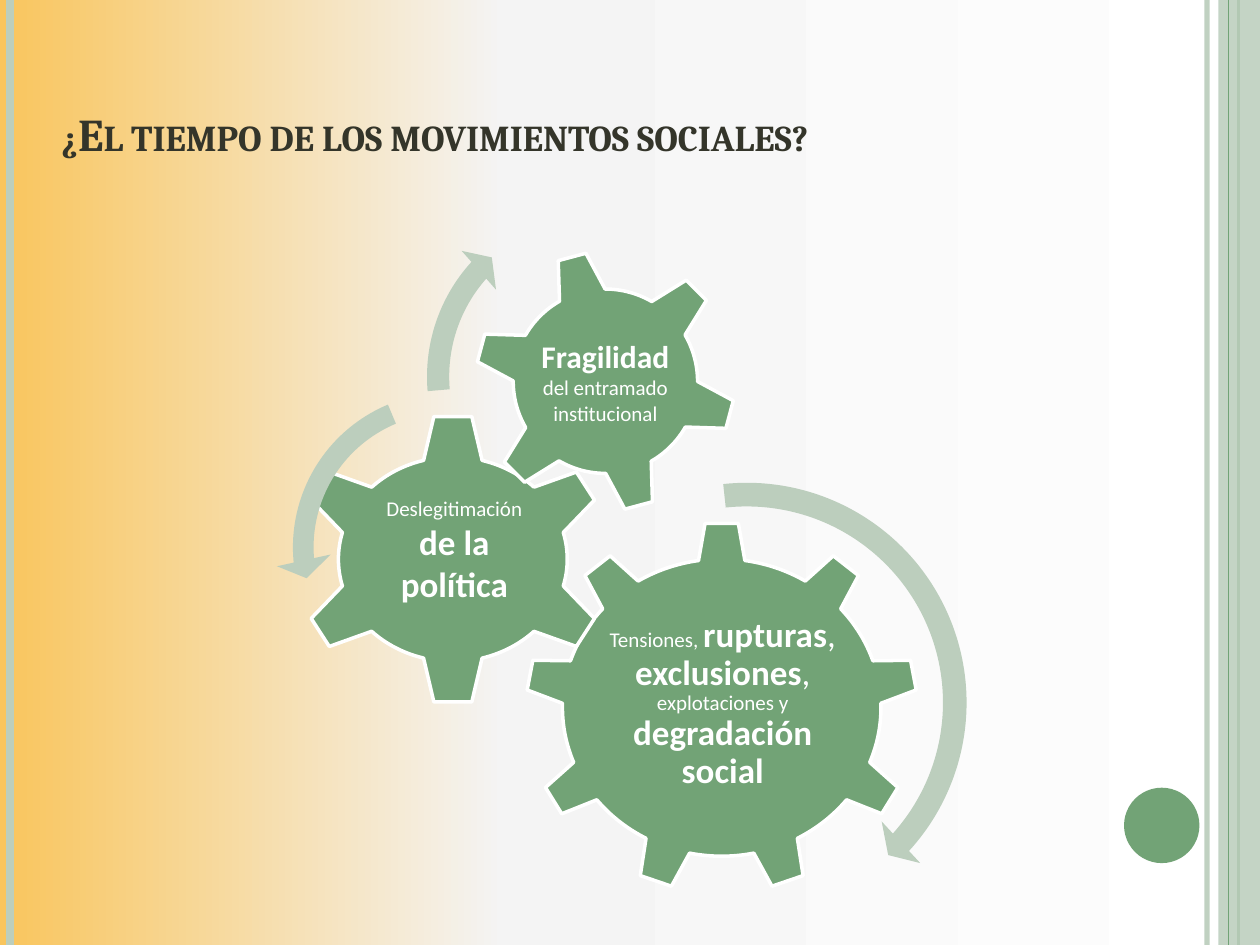
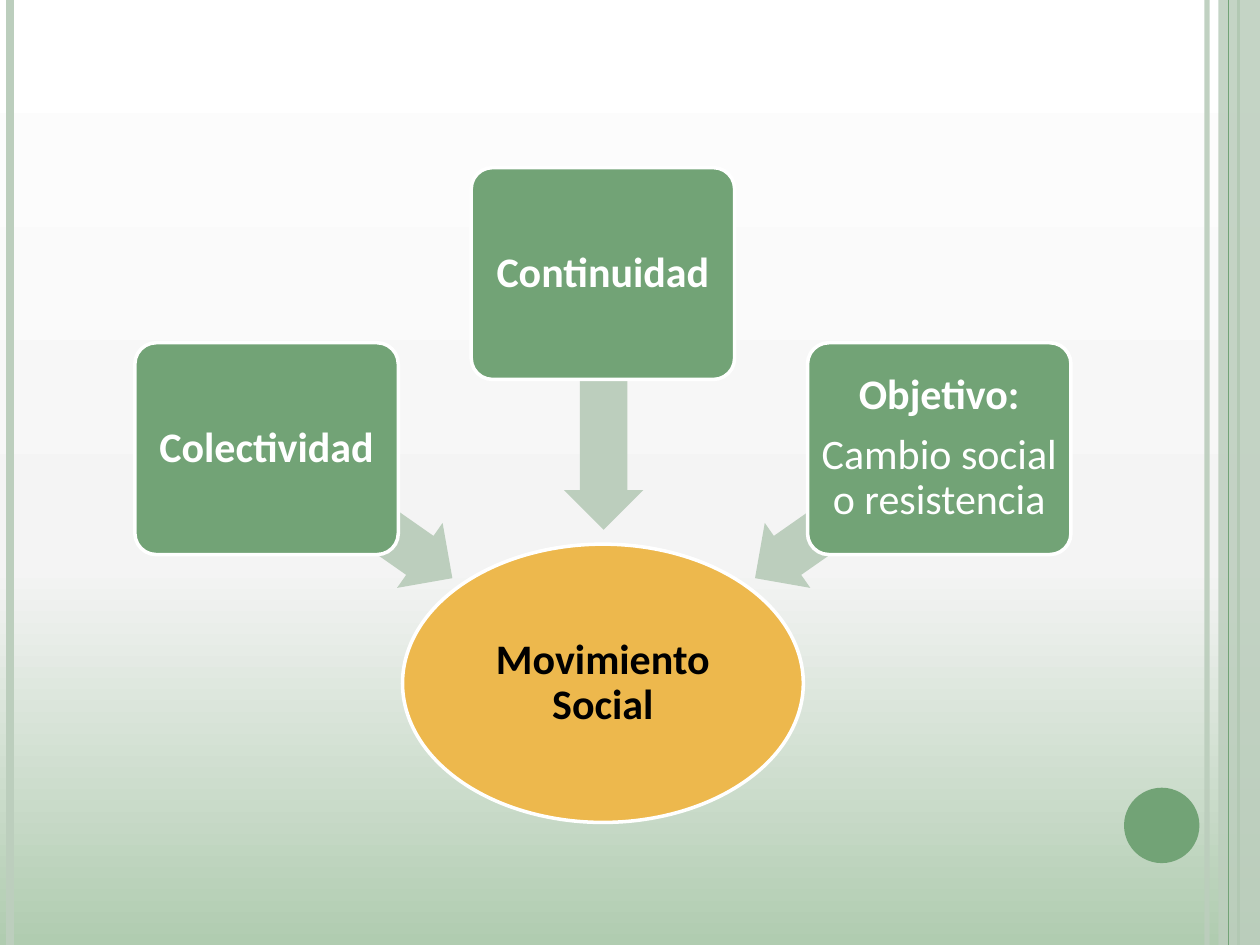
import pptx
import pptx.util
import pptx.oxml
import pptx.dml.color
import pptx.enum.shapes
import pptx.enum.text
import copy

Cm = pptx.util.Cm
Pt = pptx.util.Pt
RGBColor = pptx.dml.color.RGBColor
Shape = pptx.enum.shapes.MSO_SHAPE
Anchor = pptx.enum.text.MSO_ANCHOR
Align = pptx.enum.text.PP_ALIGN

GREEN = RGBColor(0x72, 0xA3, 0x76)
PALE = RGBColor(0xBC, 0xCE, 0xBD)
MINT = RGBColor(0xB0, 0xCC, 0xB0)
AMBER = RGBColor(0xF9, 0xC5, 0x5D)
GOLD = RGBColor(0xED, 0xB8, 0x4D)
GREY = RGBColor(0xF4, 0xF4, 0xF4)
WHITE = RGBColor(0xFF, 0xFF, 0xFF)
BLACK = RGBColor(0, 0, 0)
DARK = RGBColor(0x34, 0x35, 0x2A)

WIDE, HIGH = 25.4, 19.05


def fade(item, share):
    color = item.element.xpath("./p:spPr//a:srgbClr")[0]
    alpha = pptx.oxml.parse_xml(
        '<a:alpha xmlns:a="http://schemas.openxmlformats.org/drawingml/2006/main"/>')
    alpha.set("val", str(share * 1000))
    color.append(alpha)


def draw(slide, kind, box, fill, edge=False, adjust=(), turn=0):
    shape = slide.shapes.add_shape(kind, *map(Cm, box))
    shape.shadow.inherit = False
    shape.fill.solid()
    shape.fill.fore_color.rgb = fill
    if edge:
        shape.line.color.rgb = WHITE
        shape.line.width = Pt(2)
    else:
        shape.line.fill.background()
    for index, value in enumerate(adjust):
        shape.adjustments[index] = value
    shape.rotation = turn
    return shape


def rule(slide, left, color, width):
    line = slide.shapes.add_connector(
        pptx.enum.shapes.MSO_CONNECTOR.STRAIGHT, Cm(left), 0, Cm(left), Cm(HIGH))
    line.line.color.rgb = color
    line.line.width = Pt(width)
    line.element.spPr.append(pptx.oxml.parse_xml(
        '<a:effectLst xmlns:a="http://schemas.openxmlformats.org/drawingml/2006/main"/>'))
    return line


def write(shape, paras, color=WHITE, space=0.9, foot=0.05):
    frame = shape.text_frame
    frame.word_wrap = True
    frame.vertical_anchor = Anchor.MIDDLE
    frame.margin_left = frame.margin_right = frame.margin_top = Cm(0.05)
    frame.margin_bottom = Cm(foot)
    for index, runs in enumerate(paras):
        para = frame.add_paragraph() if index else frame.paragraphs[0]
        para.alignment = Align.CENTER
        para.line_spacing = space
        para.space_before = Pt(8.4 if index else 0)
        para.font.name = "Calibri"
        para.font.color.rgb = color
        for text, size, bold in runs:
            run = para.add_run()
            run.text = text
            run.font.size = Pt(size)
            run.font.bold = bold


def frame_master(deck, slide):
    rail = rule(slide, 24.33, PALE, 3)
    fade(rail, 93)
    left = rule(slide, 0.2, PALE, 4.5)
    inner = rule(slide, 24.97, GREEN, 1.5)
    band = draw(slide, Shape.RECTANGLE, (24.56, 0, 0.84, HIGH), PALE)
    fade(band, 87)
    thin = rule(slide, 24.77, GREEN, 0.75)
    dot = draw(slide, Shape.OVAL, (22.66, 15.88, 1.52, 1.52), GREEN)
    for number, item in enumerate((rail, left, inner, band, thin, dot), 20):
        item.element.xpath(".//p:cNvPr")[0].set("id", str(number))
        deck.slide_master.shapes.element.append(item.element)


def paint(slide, first, angle):
    fill = slide.background.fill
    fill.gradient()
    fill.gradient_angle = angle
    stops = slide.element.xpath(".//p:bg//a:gsLst")[0]
    stops.append(copy.deepcopy(stops[-1]))
    for stop, spot, color in zip(fill.gradient_stops, (0, 0.4, 1), (first, GREY, WHITE)):
        stop.position = spot
        stop.color.rgb = color


def head(slide, text, box):
    title = slide.shapes.title
    title.left, title.top, title.width, title.height = map(Cm, box)
    frame = title.text_frame
    frame.text = text
    frame.auto_size = pptx.enum.text.MSO_AUTO_SIZE.NONE
    frame.vertical_anchor = Anchor.BOTTOM
    para = frame.paragraphs[0]
    para.alignment = Align.LEFT
    para.font.name = "Cambria"
    para.font.size = Pt(26)
    para.font.bold = True
    para.font.color.rgb = DARK
    title.element.xpath(".//a:defRPr")[0].set("cap", "small")


def gears(slide, left, top):
    def place(x, y, w, h):
        return left + x, top + y, w, h

    wheels = (
        (Shape.GEAR_9, (5.09, 6.72, 7.92, 7.49), 0, (6.67, 8.47, 4.8, 3.84), 0.9, 0.05,
         [("Tensiones, ", 12, False), ("rupturas", 20, True), (", ", 20, False),
          ("exclusiones", 20, True), (", ", 20, False), ("explotaciones y ", 12, False),
          ("degradación social", 20, True)]),
        (Shape.GEAR_6, (0.44, 4.53, 6.38, 5.89), 0, (2.02, 6.03, 3.28, 2.92), 1, 0.44,
         [("Deslegitimación", 12, False), (" ", 9, False), ("de la política", 20, True)]),
        (Shape.GEAR_6, (4.05, 1.23, 5.31, 5.31), 345, (5.22, 2.4, 2.97, 2.97), 1, 0.05,
         [("Fragilidad", 18, True), (" ", 16, True),
          ("del entramado institucional", 12, False)]),
    )
    for kind, box, turn, area, space, foot, runs in wheels:
        draw(slide, kind, place(*box), GREEN, True, turn=turn)
        label = slide.shapes.add_textbox(*map(Cm, place(*area)))
        write(label, [runs], space=space, foot=foot)

    arcs = (
        (Shape.CIRCULAR_ARROW, 4.79, 5.6, 9.53, (0.05, 2.99, 25.3, 158.31, 0.06)),
        (Shape.LEFT_CIRCULAR_ARROW, 0.06, 3.77, 6.93, (0.06, 4.3, 104.89, 148.38, 0.08)),
        (Shape.CIRCULAR_ARROW, 2.81, 0.06, 7.47, (0.06, 3.94, 133.14, 105.08, 0.07)),
    )
    for kind, x, y, size, adjust in arcs:
        draw(slide, kind, place(x, y, size, size), PALE, adjust=adjust)


def funnel(slide, left, top, width):
    goal = draw(slide, Shape.OVAL, (left + (width - 8.08) / 2, top + 7.59, 8.08, 5.61),
                GOLD, True)
    write(goal, [[("Movimiento Social", 24, True)]], BLACK)
    card, tall, thick = 5.31, 4.27, 1.6
    step = (width - card) / 2
    parts = (
        (3.53, (2.26, 6.17, 4.55), 215, [[("Colectividad", 24, True)]]),
        (0, (6.86, 3.91, 5.18), 270, [[("Continuidad", 24, True)]]),
        (3.53, (12.09, 6.17, 4.55), 325,
         [[("Objetivo:", 24, True)], [("Cambio social o resistencia", 24, False)]]),
    )
    for index, (drop, (x, y, span), turn, paras) in enumerate(parts):
        draw(slide, Shape.LEFT_ARROW, (left + x, top + y, span, thick), PALE,
             adjust=(0.6, 0.5), turn=turn)
        box = draw(slide, Shape.ROUNDED_RECTANGLE,
                   (left + index * step, top + drop, card, tall), GREEN, True, (0.1,))
        write(box, paras)


def main():
    deck = pptx.Presentation()
    deck.slide_width, deck.slide_height = Cm(WIDE), Cm(HIGH)

    first = deck.slides.add_slide(deck.slide_layouts[5])
    frame_master(deck, first)
    paint(first, AMBER, 0)
    head(first, "¿El tiempo de los movimientos sociales?", (0.99, 1.19, 20.75, 2.18))
    gears(first, 5.5, 3.8)

    second = deck.slides.add_slide(deck.slide_layouts[6])
    paint(second, MINT, 90)
    funnel(second, 2.72, 3.38, 18.87)

    deck.save("out.pptx")


if __name__ == "__main__":
    main()
